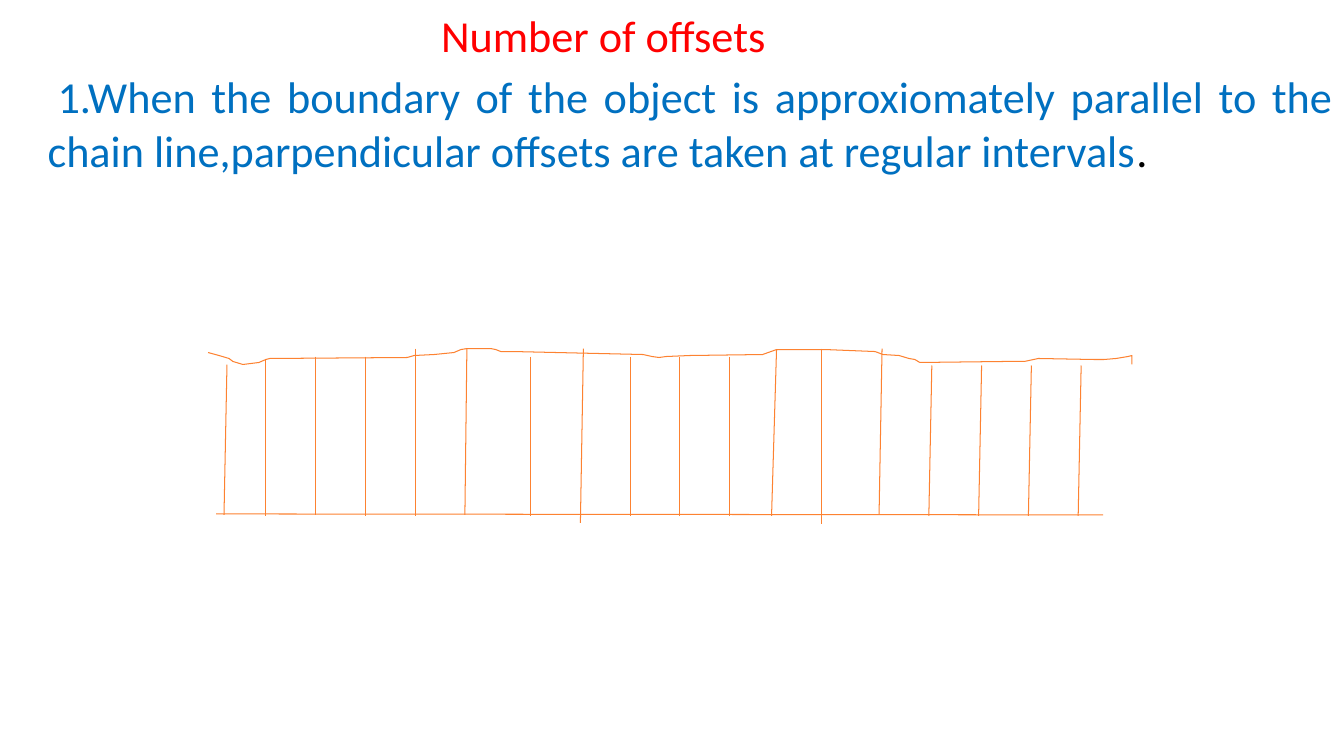
from lxml.etree import SubElement
from pptx import Presentation
from pptx.dml.color import RGBColor
from pptx.enum.shapes import MSO_CONNECTOR as Link
from pptx.enum.text import MSO_ANCHOR as Anchor, MSO_AUTO_SIZE as Fit, PP_ALIGN as Align
from pptx.oxml.ns import qn
from pptx.util import Inches, Pt

CELL = Inches(0.01)
COLS, ROWS = 1350, 750
ORANGE, RED, BLUE, BLACK = "FD8231", "FF0000", "0070C0", "000000"
RULE = ("1.When the boundary of the object is approxiomately parallel to the "
        "chain line,parpendicular offsets are taken at regular intervals")

BOUND = [(0, 4), (11, 7), (21, 10), (25, 13), (35, 16), (51, 14), (58, 11),
         (62, 10), (200, 9), (207, 7), (227, 6), (247, 4), (254, 1), (260, 0),
         (284, 0), (289, 1), (294, 3), (307, 3), (437, 6), (446, 8), (453, 9),
         (460, 8), (484, 7), (557, 6), (571, 1), (620, 1), (670, 3), (678, 6),
         (694, 7), (704, 10), (710, 11), (715, 14), (801, 13), (820, 13),
         (834, 10), (890, 11), (900, 11), (912, 10), (924, 8), (928, 7), (928, 16)]

STAKES = [(16, 3, 16, 167), (58, 0, 11, 168), (108, 0, 8, 167), (158, 0, 8, 168),
          (208, 0, 0, 168), (258, 2, 0, 167), (324, 0, 8, 168), (374, 3, 0, 175),
          (424, 0, 8, 168), (474, 0, 8, 168), (524, 0, 8, 168), (566, 5, 1, 168),
          (616, 0, 0, 176), (674, 3, 0, 167)]
STAKES += [(724 + 50 * n, 3, 17, 168) for n in range(4)]


def tint(code):
    return RGBColor.from_string(code)


def place(shape, box):
    shape.left, shape.top, shape.width, shape.height = [v * CELL for v in box]


def style(run, code):
    run.font.name = "Calibri"
    run.font.size = Pt(32)
    run.font.color.rgb = tint(code)


def setup(frame):
    frame.word_wrap = True
    frame.auto_size = Fit.NONE
    frame.vertical_anchor = Anchor.TOP


def head(slide, box):
    title = slide.shapes.title
    place(title, box)
    setup(title.text_frame)
    title.text_frame.text = "Number of offsets"
    para = title.text_frame.paragraphs[0]
    para.alignment = Align.LEFT
    style(para.runs[0], RED)


def body(slide, box):
    frame = slide.shapes.add_textbox(*[v * CELL for v in box]).text_frame
    setup(frame)
    para = frame.paragraphs[0]
    para.text = RULE
    para.add_run().text = "."
    para.alignment = Align.JUSTIFY
    props = para._p.get_or_add_pPr()
    props.set("marL", str(38 * CELL))
    props.set("indent", str(10 * CELL))
    for run, code in zip(para.runs, (BLUE, BLACK)):
        style(run, code)


def ink(shape):
    shape.line.color.rgb = tint(ORANGE)
    shape.line.width = Pt(0.75)


def chart(slide, box):
    left, top = box[:2]

    def draw(x1, y1, x2, y2):
        line = slide.shapes.add_connector(
            Link.STRAIGHT, (left + x1) * CELL, (top + y1) * CELL,
            (left + x2) * CELL, (top + y2) * CELL)
        ink(line)
        SubElement(line._element.spPr, qn("a:effectLst"))

    draw(8, 166, 899, 167)
    path = slide.shapes.build_freeform(*BOUND[0], scale=CELL)
    path.add_line_segments(BOUND[1:], close=False)
    edge = path.convert_to_shape(left * CELL, top * CELL)
    edge.fill.background()
    edge.shadow.inherit = False
    ink(edge)
    for foot, lean, high, low in STAKES:
        draw(foot + lean, high, foot, low)


def main():
    deck = Presentation()
    deck.slide_width, deck.slide_height = COLS * CELL, ROWS * CELL
    slide = deck.slides.add_slide(deck.slide_layouts[5])
    head(slide, (433, 3, 400, 64))
    body(slide, (0, 65, COLS, 125))
    chart(slide, (209, 350, 930, 176))
    deck.save("out.pptx")


if __name__ == "__main__":
    main()
